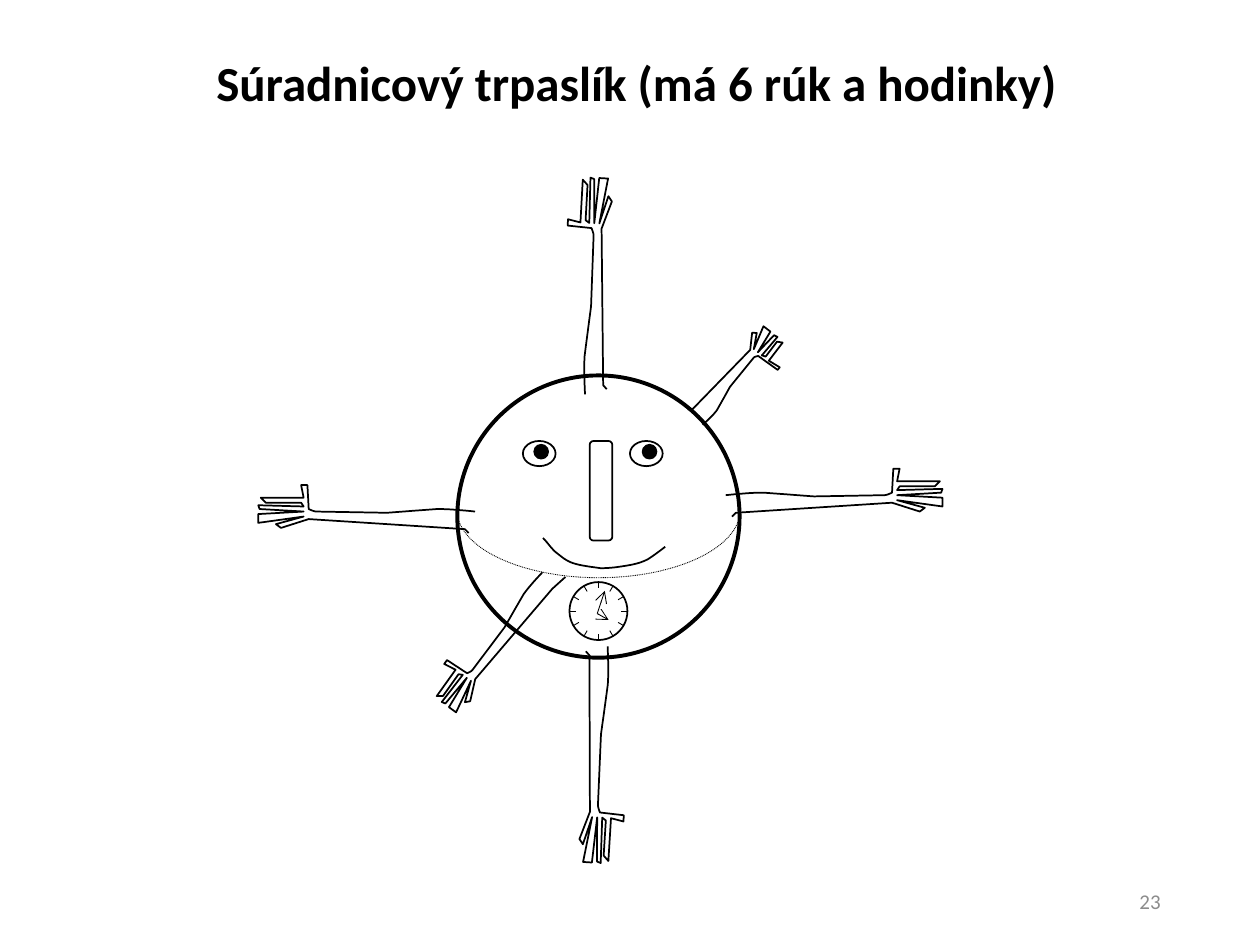
from math import cos, radians, sin

from lxml import etree
from pptx import Presentation
from pptx.dml.color import RGBColor
from pptx.enum.dml import MSO_LINE
from pptx.enum.shapes import MSO_CONNECTOR, MSO_SHAPE
from pptx.enum.text import MSO_ANCHOR, PP_ALIGN
from pptx.oxml.ns import qn
from pptx.util import Inches, Pt

OVAL, ARC, ROUNDED = MSO_SHAPE.OVAL, MSO_SHAPE.ARC, MSO_SHAPE.ROUNDED_RECTANGLE
STRAIGHT = MSO_CONNECTOR.STRAIGHT
DOTTED = MSO_LINE.ROUND_DOT
TOP, MIDDLE = MSO_ANCHOR.TOP, MSO_ANCHOR.MIDDLE
CENTER, RIGHT = PP_ALIGN.CENTER, PP_ALIGN.RIGHT

BLACK = RGBColor(0x00, 0x00, 0x00)
GREY = RGBColor(0x8C, 0x8C, 0x8C)
FONT = "Calibri"

# Text: wording, box, size, bold, colour, alignment, anchor
TEXTS = [
    ("Súradnicový trpaslík (má 6 rúk a hodinky)", (1.15, 0.37, 7.8, 0.57),
     28, True, BLACK, CENTER, TOP),
    ("23", (7.06, 6.95, 2.25, 0.4), 12, False, GREY, RIGHT, MIDDLE),
]

# Body and face: left, top, width, height
HEAD = (3.63, 2.98, 2.24, 2.24)
EQUATOR = (4.21, 2.92, 1.08, 2.25)
NOSE = (4.68, 3.5, 0.18, 0.79)
EYES = [(4.15, 3.5, 0.26, 0.2), (5, 3.5, 0.26, 0.2)]
PUPILS = [(4.24, 3.53, 0.11, 0.11), (5.1, 3.53, 0.11, 0.11)]
SMILE_START = (4.31, 4.27)
SMILE_CURVES = [
    ((4.35, 4.31), (4.38, 4.36), (4.42, 4.39)),
    ((4.46, 4.42), (4.49, 4.45), (4.55, 4.47)),
    ((4.61, 4.49), (4.7, 4.5), (4.77, 4.51)),
    ((4.84, 4.51), (4.91, 4.5), (4.97, 4.49)),
    ((5.03, 4.48), (5.08, 4.47), (5.14, 4.44)),
    ((5.19, 4.41), (5.28, 4.34), (5.28, 4.34)),
]

# Watch: centre, outer and inner radius of the ticks, tips of the hands
WATCH_CENTER = (4.75, 4.85)
WATCH_RADIUS, TICK_INNER = 0.23, 0.18
HANDS_JOINT = (4.74, 4.87)
HAND_TIPS = [(4.8, 4.69), (4.83, 4.92)]

# One arm pointing right, measured from its middle
ARM_LENGTH = 1.73
SHOULDER = (-0.86, 0.02)
UPPER_ARM_CURVES = [
    ((-0.76, 0.01), (-0.66, 0), (-0.56, 0)),
    ((-0.42, 0.01), (-0.16, 0.03), (-0.16, 0.03)),
]
WRIST = (0.4, 0.02)
WRIST_CURVES = [((0.42, 0.02), (0.46, 0), (0.46, 0))]
FINGERS_AND_ELBOW = [
    (0.47, -0.19), (0.52, -0.19), (0.5, -0.09), (0.84, -0.09),
    (0.8, -0.05), (0.52, -0.05), (0.5, -0.02), (0.86, -0.03),
    (0.85, 0), (0.5, 0.02), (0.86, 0.04), (0.86, 0.11),
    (0.5, 0.06), (0.72, 0.12), (0.68, 0.15), (0.46, 0.08),
    (-0.78, 0.16),
]
CUFF_DROP = 0.03

# Arms: middle, length, rotation, mirror (1 or -1), cuff length
ARMS = [
    ((4.67, 2.27), 1.73, 273.1, 1, 0.03),
    ((5.87, 3.02), 0.92, 127.3, -1, 0.03),
    ((6.62, 3.91), 1.73, 0, 1, 0.03),
    ((4.79, 5.99), 1.73, 93.5, 1, 0.03),
    ((2.91, 4.04), 1.73, 0, -1, 0.03),
    ((3.91, 5.06), 1.31, 305.6, -1, 0.18),
]

prs = Presentation()
prs.slide_width, prs.slide_height = Inches(10), Inches(7.5)
slide = prs.slides.add_slide(prs.slide_layouts[6])


def style(shape, weight, filled=False):
    shape.shadow.inherit = False
    if filled:
        shape.fill.solid()
        shape.fill.fore_color.rgb = BLACK
    else:
        shape.fill.background()
    shape.line.color.rgb = BLACK
    shape.line.width = Pt(weight)


def add_part(kind, box, weight=1, filled=False):
    part = slide.shapes.add_shape(kind, *map(Inches, box))
    style(part, weight, filled)
    return part


def add_segment(start, end, arrow=False):
    segment = slide.shapes.add_connector(STRAIGHT, *map(Inches, start + end))
    segment.line.color.rgb = BLACK
    segment.line.width = Pt(0.5)
    if arrow:
        etree.SubElement(segment.line._get_or_add_ln(), qn("a:tailEnd"), type="arrow")
    etree.SubElement(segment._element.spPr, qn("a:effectLst"))


def trace_curves(start, curves, steps=8):
    """Points along a chain of cubic curves, the start included."""
    points = [start]
    for control_1, control_2, end in curves:
        corners = (points[-1], control_1, control_2, end)
        for step in range(1, steps + 1):
            t = step / steps
            weights = ((1 - t) ** 3, 3 * t * (1 - t) ** 2, 3 * t * t * (1 - t), t ** 3)
            points.append(tuple(sum(w * c[axis] for w, c in zip(weights, corners))
                                for axis in (0, 1)))
    return points


def add_outline(points):
    start, *rest = [(Inches(x), Inches(y)) for x, y in points]
    builder = slide.shapes.build_freeform(*start)
    builder.add_line_segments(rest, close=False)
    style(builder.convert_to_shape(), 1)


def around(center, radius, degrees):
    angle = radians(degrees)
    return center[0] + radius * cos(angle), center[1] + radius * sin(angle)


# Head with its dotted equator
add_part(OVAL, HEAD, 2.25)
equator = add_part(ARC, EQUATOR, 0.5)
equator.rotation = 90
equator.adjustments[0], equator.adjustments[1] = 163.747, 53.55
equator.line.dash_style = DOTTED

# Watch
add_part(OVAL, (WATCH_CENTER[0] - WATCH_RADIUS, WATCH_CENTER[1] - WATCH_RADIUS,
                2 * WATCH_RADIUS, 2 * WATCH_RADIUS))
for hour in range(12):
    add_segment(around(WATCH_CENTER, WATCH_RADIUS, hour * 30),
                around(WATCH_CENTER, TICK_INNER, hour * 30))
for tip in HAND_TIPS:
    add_segment(HANDS_JOINT, tip, arrow=True)

# Eyes and nose
for eye in EYES:
    add_part(OVAL, eye)
add_part(ROUNDED, NOSE)

# Arms
arm_outline = (trace_curves(SHOULDER, UPPER_ARM_CURVES)
               + trace_curves(WRIST, WRIST_CURVES) + FINGERS_AND_ELBOW)
elbow_x, elbow_y = arm_outline[-1]
for (middle_x, middle_y), length, rotation, mirror, cuff in ARMS:
    stretch = mirror * length / ARM_LENGTH
    c, s = cos(radians(rotation)), sin(radians(rotation))
    add_outline([(middle_x + x * stretch * c - y * s, middle_y + x * stretch * s + y * c)
                 for x, y in arm_outline + [(elbow_x - cuff, elbow_y + CUFF_DROP)]])

# Pupils and smile
for pupil in PUPILS:
    add_part(OVAL, pupil, filled=True)
add_outline(trace_curves(SMILE_START, SMILE_CURVES))

# Title and page number
for wording, box, size, bold, color, alignment, anchor in TEXTS:
    frame = slide.shapes.add_textbox(*map(Inches, box)).text_frame
    frame.word_wrap = True
    frame.vertical_anchor = anchor
    paragraph = frame.paragraphs[0]
    paragraph.alignment = alignment
    run = paragraph.add_run()
    run.text = wording
    run.font.name, run.font.size, run.font.bold = FONT, Pt(size), bold
    run.font.color.rgb = color

prs.save("out.pptx")
